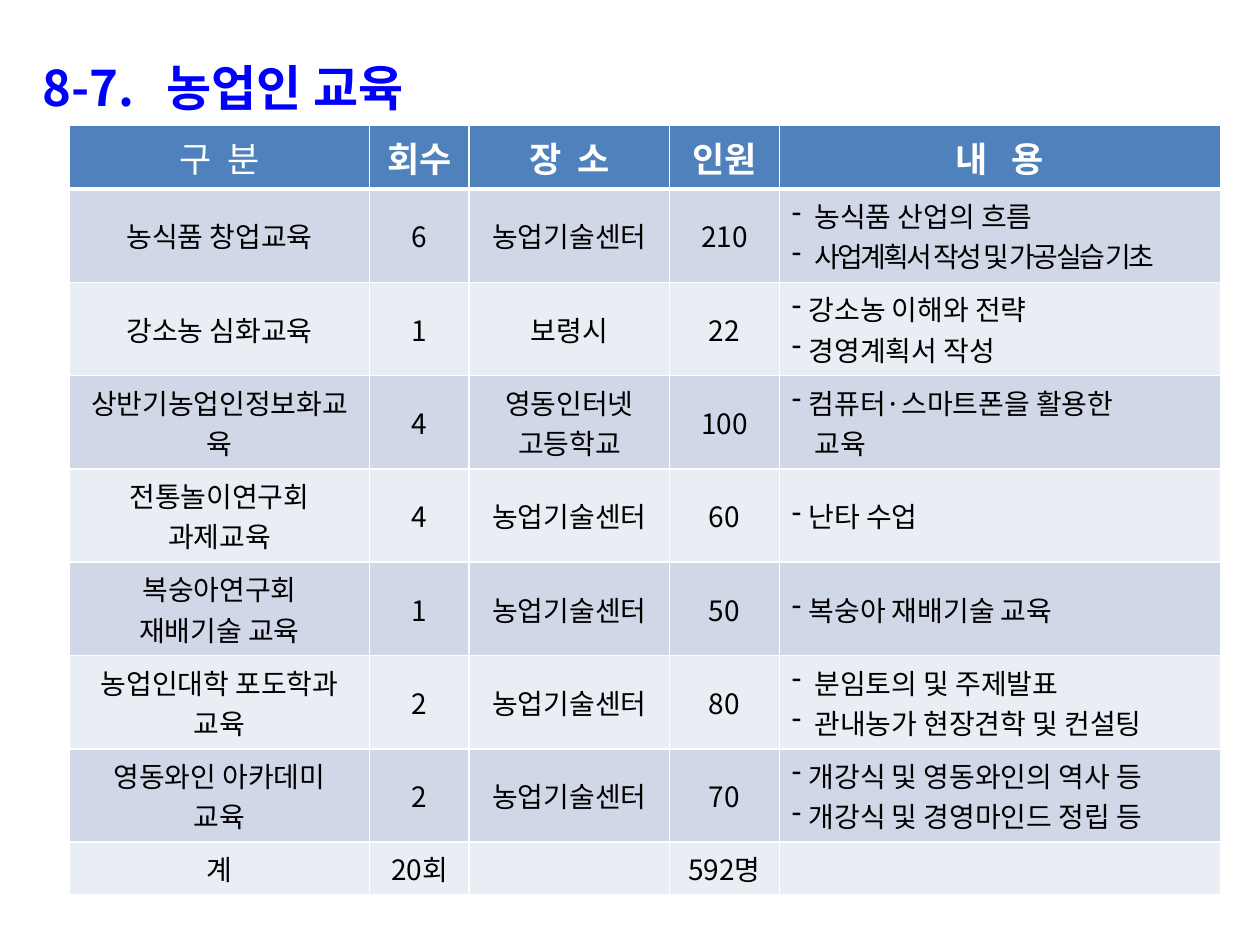
from lxml.etree import SubElement
from pptx import Presentation
from pptx.dml.color import RGBColor
from pptx.enum.text import MSO_ANCHOR, MSO_AUTO_SIZE, PP_ALIGN
from pptx.oxml import parse_xml
from pptx.oxml.ns import nsdecls, qn
from pptx.util import Cm, Pt

FONT = "Noto Sans CJK KR"
COLORS = {
    "title": "0000FF", "header": "4F81BD", "odd": "D0D8E8",
    "even": "E9EDF4", "text": "000000", "white": "FFFFFF",
}
NARROW, WIDE = 0.34, 0.46  # hanging indents of the dash lists, in cm
COLUMN_WIDTHS = [6.05, 2.01, 4.04, 2.21, 8.89]
HEADER_HEIGHT, ROW_HEIGHT, TOTAL_HEIGHT = 1.24, 1.8, 1.04

# Header text, letter spacing in points, bold
HEADERS = [("구 분", 2.3, False), ("회수", 0, True), ("장 소", 2.3, True),
           ("인원", 0, True), ("내 용", 4.5, True)]

CENTER = "농업기술센터"
# Course, sessions, place, people, contents, hanging indent of the contents
COURSES = [
    ("농식품 창업교육", "6", CENTER, "210",
     ["농식품 산업의 흐름", "사업계획서 작성 및 가공실습 기초"], WIDE),
    ("강소농 심화교육", "1", "보령시", "22",
     ["강소농 이해와 전략", "경영계획서 작성"], NARROW),
    ("상반기농업인정보화교육", "4", "영동인터넷\n고등학교", "100",
     ["컴퓨터·스마트폰을 활용한", "교육"], NARROW),
    ("전통놀이연구회 과제교육", "4", CENTER, "60", ["난타 수업"], NARROW),
    ("복숭아연구회\n재배기술 교육", "1", CENTER, "50",
     ["복숭아 재배기술 교육"], NARROW),
    ("농업인대학 포도학과 교육", "2", CENTER, "80",
     ["분임토의 및 주제발표", "관내농가 현장견학 및 컨설팅"], WIDE),
    ("영동와인 아카데미\n교육", "2", CENTER, "70",
     ["개강식 및 영동와인의 역사 등", "개강식 및 경영마인드 정립 등"], NARROW),
    ("계", "20회", "", "592명", [""], None),
]
TIGHT_LINE = "사업계획서 작성 및 가공실습 기초"
CONTINUED_LINE = "교육"


def style_paragraph(paragraph, size, color, bold=False):
    font = paragraph.font
    font.size, font.bold, font.name = Pt(size), bold, FONT
    font.color.rgb = RGBColor.from_string(COLORS[color])
    defaults = paragraph._p.pPr.find(qn("a:defRPr"))
    SubElement(defaults, qn("a:ea"), typeface=FONT)


def set_letter_spacing(paragraph, points):
    for run in paragraph.runs:
        run._r.get_or_add_rPr().set("spc", str(round(points * 100)))


def add_dash(paragraph, hanging, dash=True):
    properties = paragraph._p.get_or_add_pPr()
    properties.set("marL", str(Cm(hanging)))
    if dash:
        properties.set("indent", str(-Cm(hanging)))
        SubElement(properties, qn("a:buChar"), char="-")


def fill_cell(cell, color):
    cell.fill.solid()
    cell.fill.fore_color.rgb = RGBColor.from_string(COLORS[color])
    cell.vertical_anchor = MSO_ANCHOR.MIDDLE


def add_title(slide, left, top, width, height):
    title = slide.shapes.title
    title.left, title.top = Cm(left), Cm(top)
    title.width, title.height = Cm(width), Cm(height)
    frame = title.text_frame
    frame.text = "8-7.\t농업인 교육"
    frame.word_wrap = False
    frame.auto_size = MSO_AUTO_SIZE.NONE
    frame.vertical_anchor = MSO_ANCHOR.TOP
    paragraph = frame.paragraphs[0]
    paragraph.alignment = PP_ALIGN.LEFT
    paragraph.line_spacing = 1.2
    tabs = SubElement(paragraph._p.get_or_add_pPr(), qn("a:tabLst"))
    SubElement(tabs, qn("a:tab"), pos=str(Cm(2.5)), algn="l")
    style_paragraph(paragraph, 28, "title", bold=True)


def fill_header(table):
    for column, (text, spacing, bold) in enumerate(HEADERS):
        cell = table.cell(0, column)
        cell.text = text
        fill_cell(cell, "header")
        paragraph = cell.text_frame.paragraphs[0]
        paragraph.alignment = PP_ALIGN.CENTER
        style_paragraph(paragraph, 20, "white", bold)
        set_letter_spacing(paragraph, spacing)
        # Thick white rule under the header
        cell._tc.get_or_add_tcPr().insert(0, parse_xml(
            f'<a:lnB {nsdecls("a")} w="{Pt(3)}"><a:solidFill>'
            f'<a:srgbClr val="{COLORS["white"]}"/></a:solidFill></a:lnB>'))


def fill_course(table, row, course):
    *centred, contents, hanging = course
    color = "odd" if row % 2 else "even"
    for column, text in enumerate([*centred, "\n".join(contents)]):
        cell = table.cell(row, column)
        cell.text = text
        fill_cell(cell, color)
        for paragraph in cell.text_frame.paragraphs:
            if column < len(centred):
                paragraph.alignment = PP_ALIGN.CENTER
            elif paragraph.text == CONTINUED_LINE:
                add_dash(paragraph, WIDE, dash=False)
            elif hanging:
                add_dash(paragraph, hanging)
            style_paragraph(paragraph, 16, "text")
            if paragraph.text == TIGHT_LINE:
                set_letter_spacing(paragraph, -1.5)


def add_course_table(slide, left, top):
    heights = [HEADER_HEIGHT] + [ROW_HEIGHT] * (len(COURSES) - 1) + [TOTAL_HEIGHT]
    table = slide.shapes.add_table(
        len(heights), len(COLUMN_WIDTHS), Cm(left), Cm(top),
        Cm(sum(COLUMN_WIDTHS)), Cm(sum(heights))).table
    table.first_row = table.horz_banding = False
    for column, width in zip(table.columns, COLUMN_WIDTHS):
        column.width = Cm(width)
    for row, height in zip(table.rows, heights):
        row.height = Cm(height)
    fill_header(table)
    for row, course in enumerate(COURSES, start=1):
        fill_course(table, row, course)


def main():
    presentation = Presentation()
    presentation.slide_width, presentation.slide_height = Cm(25.4), Cm(19.05)
    slide = presentation.slides.add_slide(presentation.slide_layouts[5])
    add_title(slide, 0.61, 0.79, 24, 1.65)
    add_course_table(slide, 1.4, 2.53)
    presentation.save("out.pptx")


if __name__ == "__main__":
    main()
